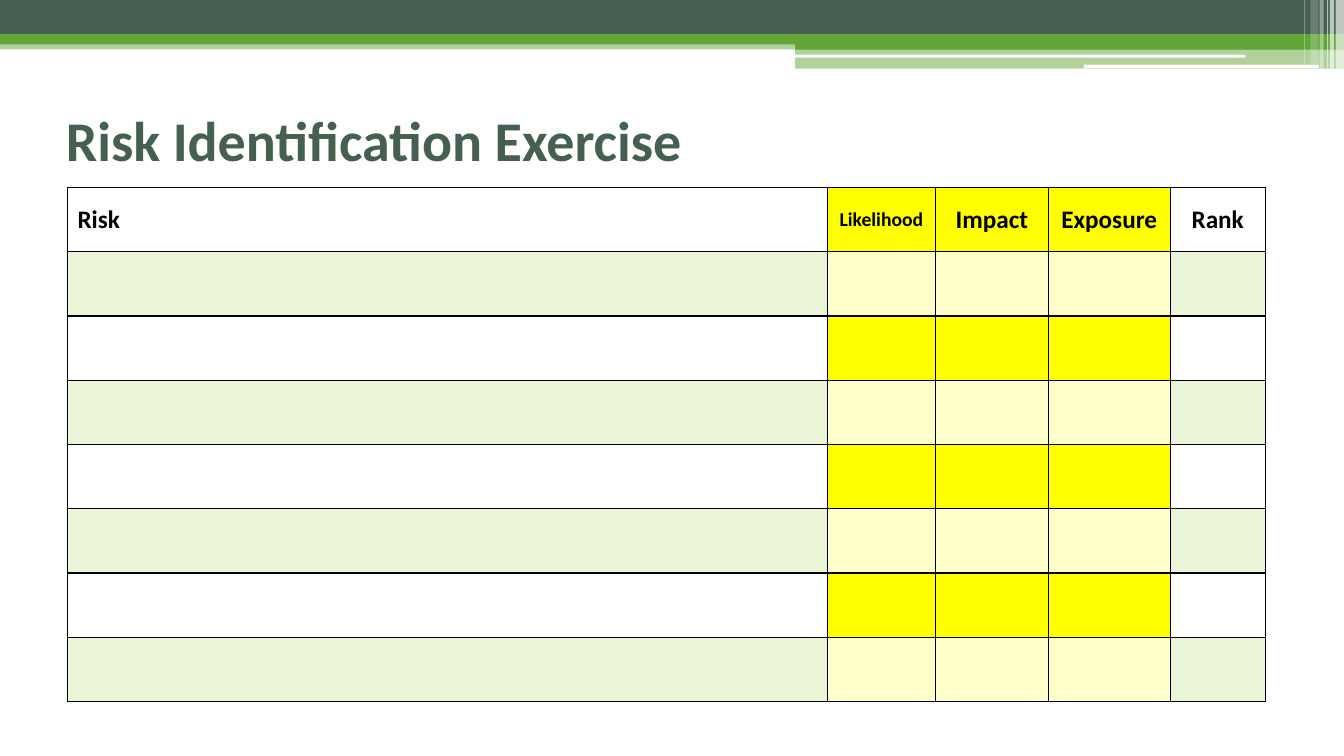
from lxml.etree import SubElement
from pptx import Presentation
from pptx.dml.color import RGBColor
from pptx.enum.shapes import MSO_SHAPE
from pptx.enum.text import MSO_ANCHOR, PP_ALIGN
from pptx.oxml.ns import qn
from pptx.util import Pt

COLORS = {
    "slate": "455F51",
    "green": "63A537",
    "lime": "99CB38",
    "yellow": "FFFF00",
    "white": "FFFFFF",
    "black": "000000",
}
FONT = "Calibri"
SLIDE_WIDTH, SLIDE_HEIGHT = 960, 540

BANDS = [
    (0, 28.8, 960, 6.5, "green", 50),
    (0, 0, 960, 24.5, "slate", 100),
    (0, 24.5, 960, 7.2, "green", 100),
    (568, 28.4, 392, 7, "green", 100),
    (568, 35, 392, 14, "green", 50),
]
SLITS = [
    (567.5, 39.1, 322, 2),
    (774, 46.2, 168, 2.6),
]
STRIPES = [
    (954, 6, 49, 65),
    (950, 2.9, 49, 65),
    (947.9, 0.7, 49, 60),
    (942.7, 2.9, 49, 40),
    (936, 5.8, 46, 20),
    (931.5, 0.7, 46, 30),
]
COLUMNS = [
    ("Risk", 542.9, 18),
    ("Likelihood", 77.1, 14),
    ("Impact", 80.7, 18),
    ("Exposure", 87.1, 18),
    ("Rank", 67.9, 18),
]
SCORED = ("Likelihood", "Impact", "Exposure")
ROW_COUNT = 8
ROW_HEIGHT = 45.9


def paint(fill, color, opacity=100):
    fill.solid()
    fill.fore_color.rgb = RGBColor.from_string(COLORS[color])
    if opacity < 100:
        tint = fill._xPr.find(qn("a:solidFill"))[0]
        SubElement(tint, qn("a:alpha"), val=str(opacity * 1000))


def add_bar(slide, left, top, width, height, color, opacity=100,
            kind=MSO_SHAPE.RECTANGLE):
    bar = slide.shapes.add_shape(kind, Pt(left), Pt(top), Pt(width), Pt(height))
    bar.shadow.inherit = False
    bar.line.fill.background()
    paint(bar.fill, color, opacity)


def add_bold_run(paragraph, text, size, color):
    run = paragraph.add_run()
    run.text = text
    run.font.name = FONT
    run.font.size = Pt(size)
    run.font.bold = True
    run.font.color.rgb = RGBColor.from_string(COLORS[color])


def add_banner(slide):
    for band in BANDS:
        add_bar(slide, *band)
    for slit in SLITS:
        add_bar(slide, *slit, "white", kind=MSO_SHAPE.ROUNDED_RECTANGLE)
    for left, width, height, opacity in STRIPES:
        add_bar(slide, left, 0, width, height, "white", opacity)


def add_title(slide, text):
    title = slide.shapes.add_textbox(Pt(40), Pt(57.6), Pt(864), Pt(84.2))
    frame = title.text_frame
    frame.word_wrap = True
    frame.vertical_anchor = MSO_ANCHOR.MIDDLE
    add_bold_run(frame.paragraphs[0], text, 40, "slate")


def add_borders(cell):
    properties = cell._tc.get_or_add_tcPr()
    for side in ("lnL", "lnR", "lnT", "lnB"):
        border = SubElement(properties, qn(f"a:{side}"), w=str(Pt(1)))
        ink = SubElement(border, qn("a:solidFill"))
        SubElement(ink, qn("a:srgbClr"), val=COLORS["black"])


def fill_cell(cell, scored, tinted):
    if scored or tinted:
        paint(cell.fill, "yellow" if scored else "lime", 20 if tinted else 100)
    else:
        cell.fill.background()


def add_risk_table(slide):
    total_width = sum(width for _, width, _ in COLUMNS)
    risks = slide.shapes.add_table(
        ROW_COUNT, len(COLUMNS), Pt(48.2), Pt(133.9),
        Pt(total_width), Pt(ROW_COUNT * ROW_HEIGHT)).table
    risks.first_row = False
    risks.horz_banding = False
    for row in risks.rows:
        row.height = Pt(ROW_HEIGHT)
    for column, (heading, width, size) in enumerate(COLUMNS):
        risks.columns[column].width = Pt(width)
        for row in range(ROW_COUNT):
            cell = risks.cell(row, column)
            cell.vertical_anchor = MSO_ANCHOR.MIDDLE
            add_borders(cell)
            fill_cell(cell, heading in SCORED, row % 2 == 1)
        header = risks.cell(0, column).text_frame.paragraphs[0]
        header.alignment = PP_ALIGN.CENTER if column else PP_ALIGN.LEFT
        add_bold_run(header, heading, size, "black")


def main():
    deck = Presentation()
    deck.slide_width, deck.slide_height = Pt(SLIDE_WIDTH), Pt(SLIDE_HEIGHT)
    slide = deck.slides.add_slide(deck.slide_layouts[6])
    paint(slide.background.fill, "white")
    add_banner(slide)
    add_title(slide, "Risk Identification Exercise")
    add_risk_table(slide)
    deck.save("out.pptx")


if __name__ == "__main__":
    main()
